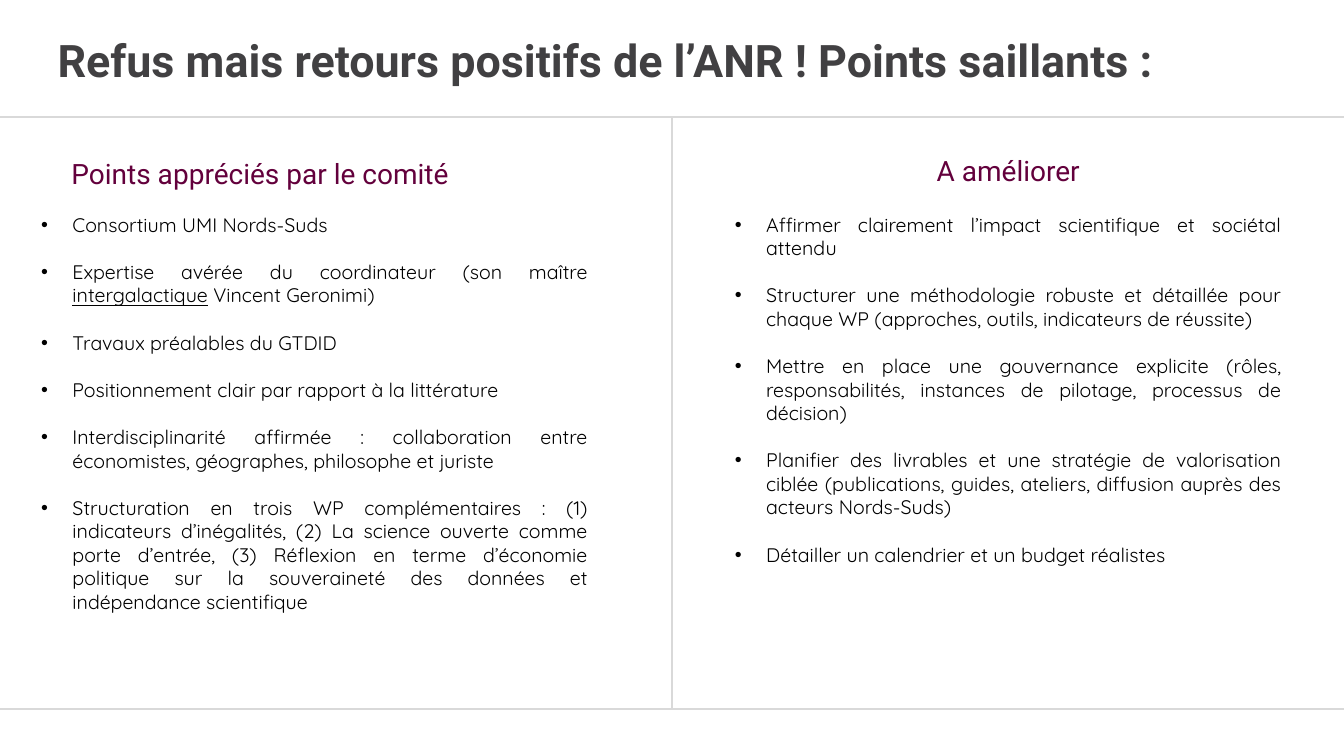
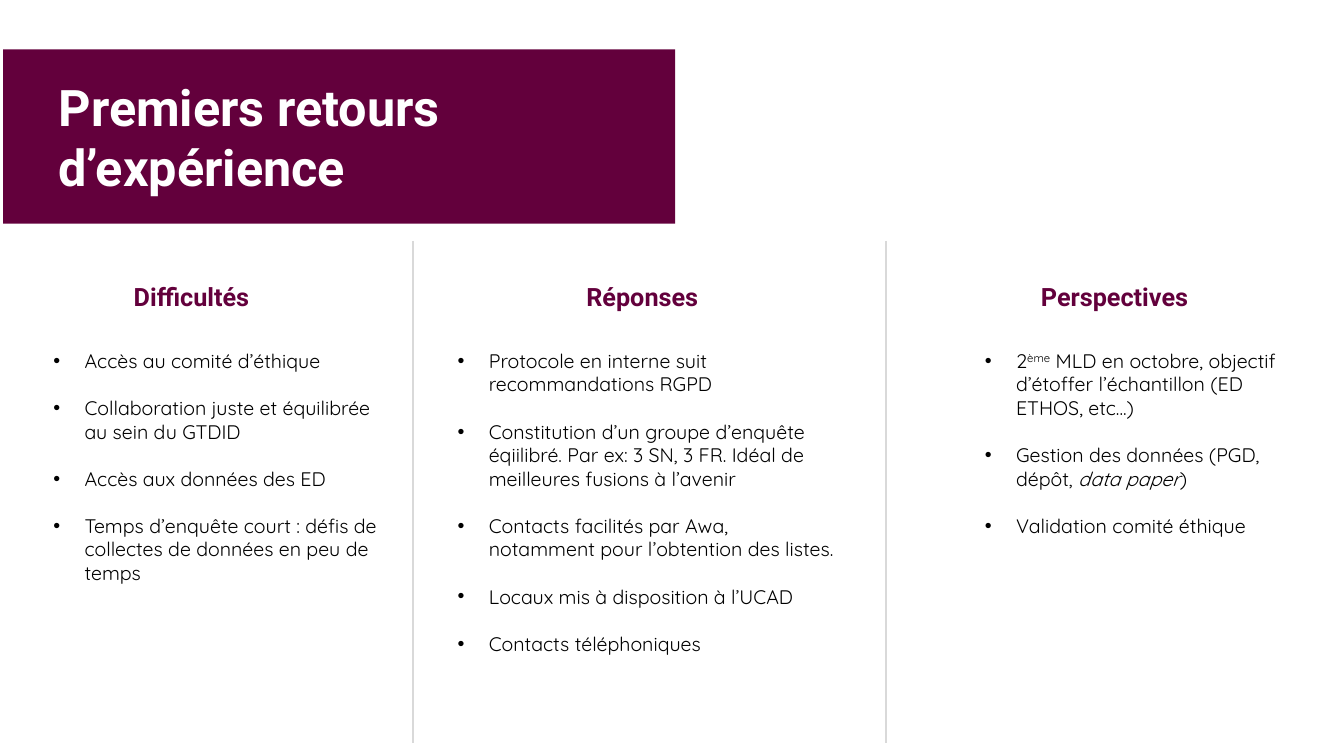
import pptx
import pptx.util
import pptx.dml.color
import pptx.enum.shapes
import pptx.enum.text
import pptx.oxml
import pptx.oxml.ns
from lxml import etree

Pt = pptx.util.Pt
RGB = pptx.dml.color.RGBColor.from_string
ALIGN = pptx.enum.text.PP_ALIGN
ANCHOR = pptx.enum.text.MSO_ANCHOR
tag = pptx.oxml.ns.qn

# Shared look
HUE = {"plum": "63003C", "ink": "414042", "text": "000000",
       "rule": "D9D9D9", "white": "FFFFFF"}
HEAD, BODY = "Roboto", "Quicksand"
GAP = 16.9  # points between list items, one line

deck = pptx.Presentation()
deck.slide_width = pptx.util.Inches(13.33)
deck.slide_height = pptx.util.Inches(7.5)
WIDE, HIGH = deck.slide_width / 100, deck.slide_height / 100


def write(slide, items, x, y, w, h, box=None, font=BODY, size=14, hue="text",
          bold=False, align=ALIGN.LEFT, anchor=ANCHOR.TOP, left=0.1, indent=None):
    """Write paragraphs in a box set in percent of the slide.

    An item is a string or a list of (text, style) runs; indent adds bullets.
    """
    box = box or slide.shapes.add_textbox(0, 0, 0, 0)
    box.left, box.width = int(x * WIDE), int(w * WIDE)
    box.top, box.height = int(y * HIGH), int(h * HIGH)
    frame = box.text_frame
    frame.word_wrap = True
    frame.auto_size = pptx.enum.text.MSO_AUTO_SIZE.NONE
    frame.vertical_anchor = anchor
    frame.margin_left = pptx.util.Inches(left)
    for row, item in enumerate(items):
        para = frame.add_paragraph() if row else frame.paragraphs[0]
        para.alignment = align
        if indent:
            para.space_after = Pt(GAP)
            props = para._p.get_or_add_pPr()
            props.set("marL", str(pptx.util.Inches(indent)))
            props.set("indent", str(pptx.util.Inches(-0.31)))
            face = etree.SubElement(props, tag("a:buFont"))
            face.set("typeface", "Arial")
            etree.SubElement(props, tag("a:buChar")).set("char", "•")
        for words, style in [(item, "")] if isinstance(item, str) else item:
            run = para.add_run()
            run.text = words
            run.font.name, run.font.size = font, Pt(size)
            run.font.bold = bold
            run.font.color.rgb = RGB(HUE[hue])
            if style == "under":
                run.font.underline = True
            elif style == "slant":
                run.font.italic = True
            elif style == "super":
                run._r.get_or_add_rPr().set("baseline", "30000")


def rule(slide, x1, y1, x2, y2):
    """Draw a grey rule between two points in percent of the slide."""
    line = slide.shapes.add_connector(
        pptx.enum.shapes.MSO_CONNECTOR.STRAIGHT,
        int(x1 * WIDE), int(y1 * HIGH), int(x2 * WIDE), int(y2 * HIGH))
    line.line.color.rgb = RGB(HUE["rule"])
    line.line.width = Pt(1.5)
    etree.SubElement(line._element.spPr, tag("a:effectLst"))


# Slide 1: feedback in two columns
slide = deck.slides.add_slide(deck.slide_layouts[5])
write(slide, ["Refus mais retours positifs de l’ANR ! Points saillants :"],
      3.53, 3.6, 92.57, 8.53, box=slide.shapes.title,
      font=HEAD, size=32, hue="ink", bold=True)

TOP, END = 15.47, 93.73
for y in (TOP, END):
    rule(slide, 0, y, 100, y)
rule(slide, 50, TOP, 50, END)

# Heading, its left, top and width, then left of the list and its items
sides = [
    ("Points appréciés par le comité", 3.53, 20, 31.66, 2.33, [
        "Consortium UMI Nords-Suds",
        [("Expertise avérée du coordinateur (son maître ", ""),
         ("intergalactique", "under"), (" Vincent Geronimi)", "")],
        "Travaux préalables du GTDID ",
        "Positionnement clair par rapport à la littérature",
        "Interdisciplinarité affirmée : collaboration entre économistes, "
        "géographes, philosophe et juriste",
        "Structuration en trois WP complémentaires : (1) indicateurs "
        "d’inégalités, (2) La science ouverte comme porte d’entrée, "
        "(3) Réflexion en terme d’économie politique sur la souveraineté "
        "des données et indépendance scientifique"]),
    ("A améliorer", 62.34, 19.6, 25.36, 53.94, [
        "Affirmer clairement l’impact scientifique et sociétal attendu",
        "Structurer une méthodologie robuste et détaillée pour chaque WP "
        "(approches, outils, indicateurs de réussite)",
        "Mettre en place une gouvernance explicite (rôles, "
        "responsabilités, instances de pilotage, processus de décision)",
        "Planifier des livrables et une stratégie de valorisation ciblée "
        "(publications, guides, ateliers, diffusion auprès des acteurs "
        "Nords-Suds)",
        "Détailler un calendrier et un budget réalistes"]),
]
for head, x, y, w, edge, items in sides:
    write(slide, [head], x, y, w, 5.87, font=HEAD, size=20, hue="plum",
          align=ALIGN.CENTER)
    write(slide, items, edge, 27.47, 42.16, 57, align=ALIGN.JUSTIFY,
          indent=0.31)

# Slide 2: lessons in three columns
slide = deck.slides.add_slide(deck.slide_layouts[5])
band = slide.shapes.title
band.fill.solid()
band.fill.fore_color.rgb = RGB(HUE["plum"])
write(slide, ["Premiers retours d’expérience"], 0.23, 6.53, 50, 23.07,
      box=band, font=HEAD, size=36, hue="white", bold=True,
      anchor=ANCHOR.MIDDLE, left=0.55)

for x in (30.76, 65.94):
    rule(slide, x, 31.87, x, 98.27)

# Heading, its left and width, then left and width of the list, and its items
parts = [
    ("Difficultés ", 1.28, 26.41, 2.48, 26.41, [
        "Accès au comité d’éthique",
        "Collaboration juste et équilibrée au sein du GTDID",
        "Accès aux données des ED",
        "Temps d’enquête court : défis de collectes de données en peu de "
        "temps"]),
    ("Réponses", 32.56, 30.46, 32.56, 30.46, [
        "Protocole en interne suit recommandations RGPD",
        "Constitution d’un groupe d’enquête éqiilibré. Par ex: 3 SN, 3 FR. "
        "Idéal de meilleures fusions à l’avenir",
        "Contacts facilités par Awa, notamment pour l’obtention des listes.",
        "Locaux mis à disposition à l’UCAD",
        "Contacts téléphoniques"]),
    ("Perspectives", 69.84, 26.18, 71.79, 26.41, [
        [("2", ""), ("ème", "super"),
         (" MLD en octobre, objectif d’étoffer l’échantillon "
          "(ED ETHOS, etc...)", "")],
        [("Gestion des données (PGD, dépôt, ", ""),
         ("data paper", "slant"), (")", "")],
        "Validation comité éthique"]),
]
for head, x, w, edge, span, items in parts:
    write(slide, [head], x, 36.53, w, 5.33, font=HEAD, size=18, hue="plum",
          bold=True, align=ALIGN.CENTER)
    write(slide, items, edge, 45.47, span, 48.5, indent=0.41)

deck.save("out.pptx")
